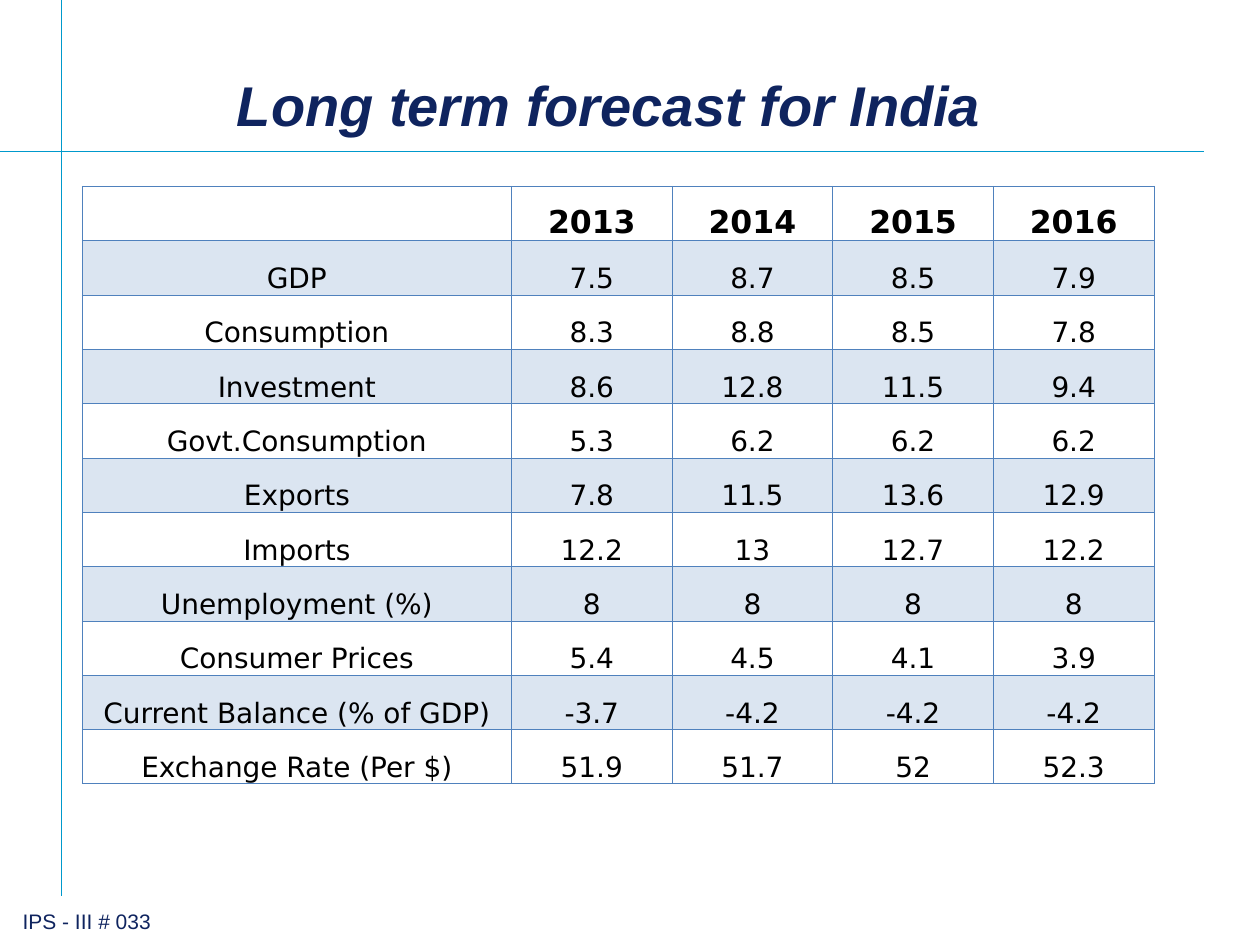
"""Build a slide with a table of the long term forecast for India."""
import pptx
import pptx.dml.color
import pptx.enum.shapes
import pptx.enum.text
import pptx.oxml
import pptx.oxml.ns
import pptx.util
from lxml import etree

Pt = pptx.util.Pt
RGBColor = pptx.dml.color.RGBColor
Anchor = pptx.enum.text.MSO_ANCHOR
Align = pptx.enum.text.PP_ALIGN

NAVY = RGBColor(0x0F, 0x24, 0x5F)
RULE_BLUE = RGBColor(0x00, 0x99, 0xCC)
BORDER_BLUE = RGBColor(0x4F, 0x81, 0xBD)
BAND_BLUE = RGBColor(0xDB, 0xE5, 0xF1)
BLACK = RGBColor(0, 0, 0)

TITLE = "Long term forecast for India"
FOOTER = "IPS - III # 033"
FORECAST = [
    ("", "2013", "2014", "2015", "2016"),
    ("GDP", "7.5", "8.7", "8.5", "7.9"),
    ("Consumption", "8.3", "8.8", "8.5", "7.8"),
    ("Investment", "8.6", "12.8", "11.5", "9.4"),
    ("Govt.Consumption", "5.3", "6.2", "6.2", "6.2"),
    ("Exports", "7.8", "11.5", "13.6", "12.9"),
    ("Imports", "12.2", "13", "12.7", "12.2"),
    ("Unemployment (%)", "8", "8", "8", "8"),
    ("Consumer Prices", "5.4", "4.5", "4.1", "3.9"),
    ("Current Balance (% of GDP)", "-3.7", "-4.2", "-4.2", "-4.2"),
    ("Exchange Rate (Per $)", "51.9", "51.7", "52", "52.3"),
]
RULES = [(0, 86.4, 688.3, 86.4), (35.2, 0, 35.2, 511.9)]
TITLE_BOX = (128.2, 36.7, 442.8, 46.1)
FOOTER_BOX = (5.8, 515.5, 87.8, 21.6)
TABLE_LEFT, TABLE_TOP = 47, 106.5
LABEL_WIDTH, YEAR_WIDTH, ROW_HEIGHT = 245.3, 91.8, 31.05

TITLE_FONT = {"name": "Arial", "size": Pt(32), "bold": True, "italic": True}
FOOTER_FONT = {"name": "Arial", "size": Pt(12)}
HEADER_FONT = {"name": "DejaVu Sans", "size": Pt(18), "bold": True}
BODY_FONT = {"name": "DejaVu Sans", "size": Pt(16), "bold": False}
CELL_FORMAT = {
    "vertical_anchor": Anchor.BOTTOM,
    "margin_left": Pt(0.72),
    "margin_right": Pt(0.72),
    "margin_top": Pt(0.72),
    "margin_bottom": Pt(0),
}
LABEL_FORMAT = {
    "word_wrap": False,
    "auto_size": pptx.enum.text.MSO_AUTO_SIZE.NONE,
    "vertical_anchor": Anchor.TOP,
}


def set_attributes(target, values):
    for name, value in values.items():
        setattr(target, name, value)


def write_paragraph(text_frame, text, font, color, alignment):
    paragraph = text_frame.paragraphs[0]
    paragraph.text = text
    paragraph.alignment = alignment
    set_attributes(paragraph.font, font)
    paragraph.font.color.rgb = color


def write_label(shape, box, text, font):
    left, top, width, height = map(Pt, box)
    set_attributes(shape, {"left": left, "top": top, "width": width, "height": height})
    set_attributes(shape.text_frame, LABEL_FORMAT)
    write_paragraph(shape.text_frame, text, font, NAVY, Align.LEFT)


def add_rule(slide, ends):
    connector = slide.shapes.add_connector(
        pptx.enum.shapes.MSO_CONNECTOR.STRAIGHT, *map(Pt, ends))
    connector.line.color.rgb = RULE_BLUE
    connector.line.width = Pt(0.75)
    properties = connector._element.spPr
    etree.SubElement(properties, pptx.oxml.ns.qn("a:effectLst"))


def add_borders(cell, widths):
    properties = cell._tc.get_or_add_tcPr()
    for side, width in widths.items():
        properties.append(pptx.oxml.parse_xml(
            f'<a:ln{side} {pptx.oxml.ns.nsdecls("a")} w="{Pt(width)}">'
            f'<a:solidFill><a:srgbClr val="{BORDER_BLUE}"/></a:solidFill></a:ln{side}>'))


def add_forecast_table(slide):
    row_count, column_count = len(FORECAST), len(FORECAST[0])
    widths = [LABEL_WIDTH] + [YEAR_WIDTH] * (column_count - 1)
    table = slide.shapes.add_table(
        row_count, column_count, Pt(TABLE_LEFT), Pt(TABLE_TOP),
        Pt(sum(widths)), Pt(ROW_HEIGHT * row_count)).table
    for column, width in zip(table.columns, widths):
        column.width = Pt(width)
    for row_index, values in enumerate(FORECAST):
        table.rows[row_index].height = Pt(ROW_HEIGHT)
        font = BODY_FONT if row_index else HEADER_FONT
        borders = {"L": 0.5, "R": 0.5,
                   "T": 1 if row_index == 1 else 0.5,
                   "B": 1 if row_index == 0 else 0.5}
        for column_index, value in enumerate(values):
            cell = table.cell(row_index, column_index)
            set_attributes(cell, CELL_FORMAT)
            write_paragraph(cell.text_frame, value, font, BLACK, Align.CENTER)
            add_borders(cell, borders)
            if row_index % 2:
                cell.fill.solid()
                cell.fill.fore_color.rgb = BAND_BLUE
            else:
                cell.fill.background()


def main():
    presentation = pptx.Presentation()
    presentation.slide_width, presentation.slide_height = Pt(720), Pt(540)
    slide = presentation.slides.add_slide(presentation.slide_layouts[5])
    for ends in RULES:
        add_rule(slide, ends)
    footer = slide.shapes.add_textbox(*map(Pt, FOOTER_BOX))
    write_label(footer, FOOTER_BOX, FOOTER, FOOTER_FONT)
    write_label(slide.shapes.title, TITLE_BOX, TITLE, TITLE_FONT)
    add_forecast_table(slide)
    presentation.save("out.pptx")


if __name__ == "__main__":
    main()
